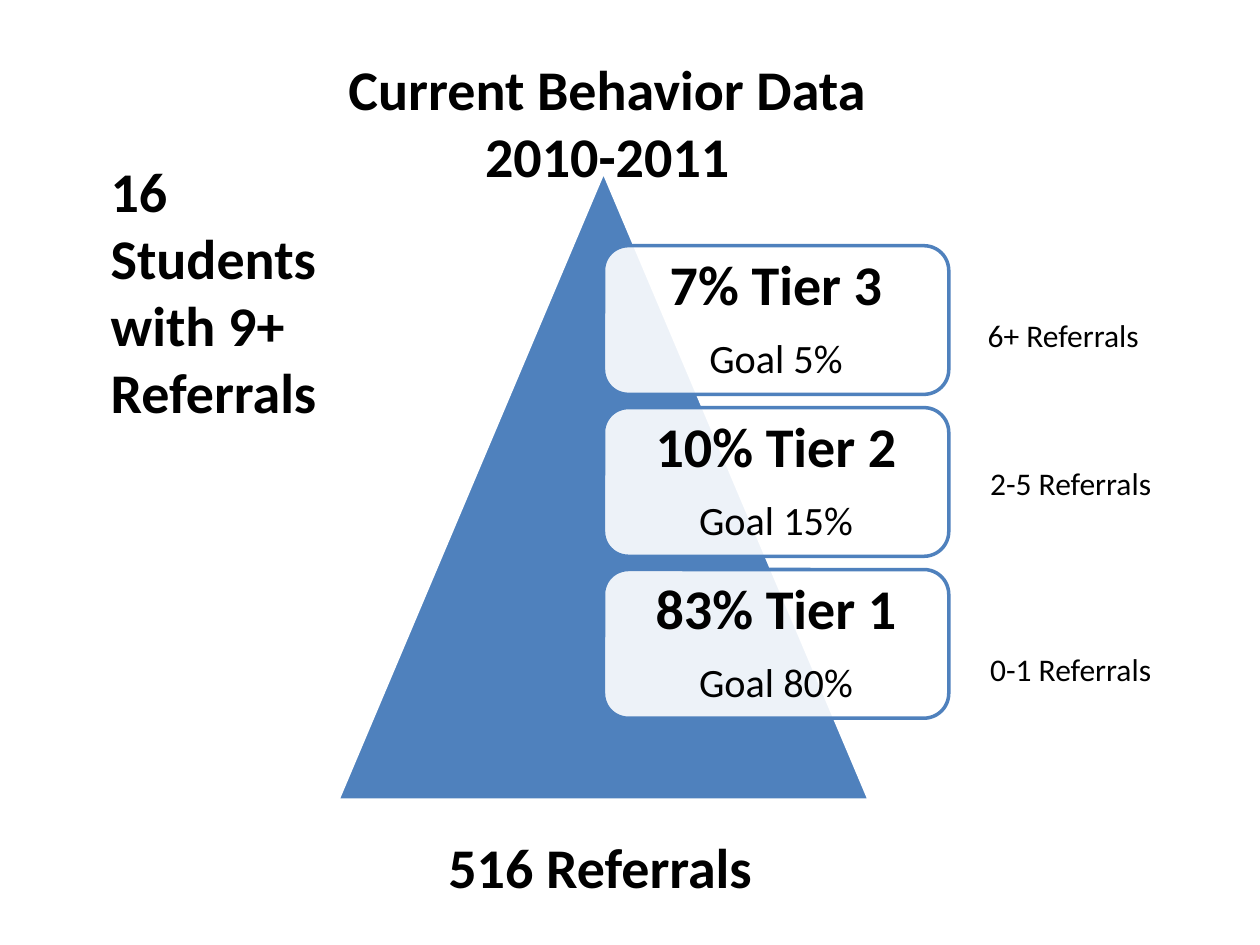
from typing import NamedTuple

from lxml import etree
from pptx import Presentation
from pptx.dml.color import RGBColor
from pptx.enum.shapes import MSO_SHAPE
from pptx.enum.text import MSO_ANCHOR, PP_ALIGN
from pptx.oxml.ns import qn
from pptx.util import Inches, Pt

TRIANGLE, ROUNDED = MSO_SHAPE.ISOSCELES_TRIANGLE, MSO_SHAPE.ROUNDED_RECTANGLE
CENTER, LEFT = PP_ALIGN.CENTER, PP_ALIGN.LEFT
TOP, MIDDLE = MSO_ANCHOR.TOP, MSO_ANCHOR.MIDDLE

COLORS = {"blue": "4F81BD", "white": "FFFFFF", "black": "000000"}
FONT = "Calibri"
TIER_TOP, TIER_STEP = 1.95, 1.285


class Box(NamedTuple):
    left: float
    top: float
    width: float
    height: float

    def lengths(self) -> list:
        return [Inches(v) for v in self]


class Tier(NamedTuple):
    name: str
    goal: str


class Label(NamedTuple):
    text: str
    box: Box
    size: int
    bold: bool


TIERS = [
    Tier("7% Tier 3", "Goal 5%"),
    Tier("10% Tier 2", "Goal 15%"),
    Tier("83% Tier 1", "Goal 80%"),
]
LABELS = [
    Label("516 Referrals", Box(3.46, 6.56, 3.07, 0.64), 32, True),
    Label("16 Students with 9+ Referrals", Box(0.78, 1.19, 1.93, 2.26), 32, True),
    Label("6+ Referrals", Box(7.74, 2.46, 1.69, 0.4), 18, False),
    Label("2-5 Referrals", Box(7.76, 3.63, 1.69, 0.4), 18, False),
    Label("0-1 Referrals", Box(7.76, 5.11, 1.69, 0.4), 18, False),
]


def rgb(name: str) -> RGBColor:
    return RGBColor.from_string(COLORS[name])


def format_paragraph(p, size: int, bold: bool, align=LEFT) -> None:
    p.alignment = align
    p.font.name = FONT
    p.font.size = Pt(size)
    p.font.bold = bold
    p.font.color.rgb = rgb("black")


def add_panel(slide, kind, box: Box, fill: str, line: str):
    sp = slide.shapes.add_shape(kind, *box.lengths())
    sp.shadow.inherit = False
    sp.fill.solid()
    sp.fill.fore_color.rgb = rgb(fill)
    sp.line.color.rgb = rgb(line)
    sp.line.width = Pt(2)
    return sp


def set_opacity(sp, percent: int) -> None:
    color = sp.fill._xPr.find(qn("a:solidFill"))[0]
    etree.SubElement(color, qn("a:alpha"), val=str(percent * 1000))


def add_tier(slide, tier: Tier, top: float) -> None:
    sp = add_panel(slide, ROUNDED, Box(4.79, top, 2.74, 1.18), "white", "blue")
    set_opacity(sp, 90)
    tf = sp.text_frame
    tf.word_wrap = True
    tf.vertical_anchor = MIDDLE
    tf.margin_left = tf.margin_right = Inches(0.13)
    tf.margin_top = tf.margin_bottom = Inches(0.13)
    tf.text = f"{tier.name}\n{tier.goal}"
    for p, size, bold, after in zip(tf.paragraphs, (32, 23), (True, False), (12, 9)):
        format_paragraph(p, size, bold, CENTER)
        p.line_spacing = 0.9
        p.space_after = Pt(after)


def add_label(slide, label: Label) -> None:
    tf = slide.shapes.add_textbox(*label.box.lengths()).text_frame
    tf.word_wrap = True
    tf.text = label.text
    format_paragraph(tf.paragraphs[0], label.size, label.bold)


def place_title(slide, text: str, box: Box) -> None:
    """Fill the title placeholder and bring it in front of the triangle."""
    title = slide.shapes.title
    title.left, title.top, title.width, title.height = box.lengths()
    tf = title.text_frame
    tf.word_wrap = True
    tf.vertical_anchor = TOP
    tf.text = text
    for p in tf.paragraphs:
        format_paragraph(p, 32, True, CENTER)
    slide.shapes.element.append(title.element)


def main() -> None:
    prs = Presentation()
    prs.slide_width, prs.slide_height = Inches(10), Inches(7.5)
    slide = prs.slides.add_slide(prs.slide_layouts.get_by_name("Title Only"))

    add_panel(slide, TRIANGLE, Box(2.68, 1.36, 4.22, 4.99), "blue", "white")
    for i, tier in enumerate(TIERS):
        add_tier(slide, tier, TIER_TOP + i * TIER_STEP)
    place_title(slide, "Current Behavior Data\n2010-2011", Box(2.37, 0.38, 4.9, 1.18))
    for label in LABELS:
        add_label(slide, label)

    prs.save("out.pptx")


if __name__ == "__main__":
    main()
